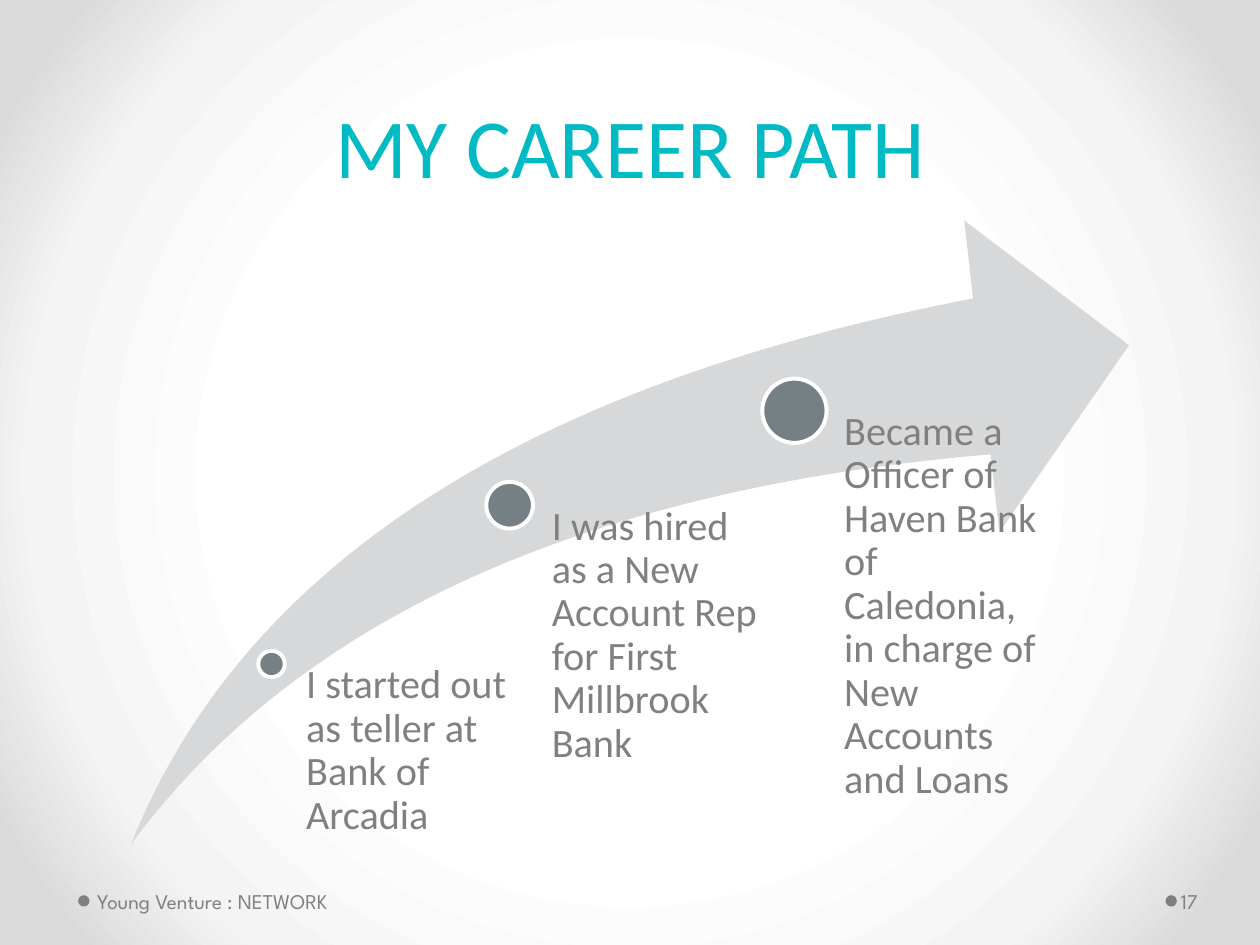
from dataclasses import dataclass

from pptx import Presentation
from pptx.dml.color import RGBColor
from pptx.enum.shapes import MSO_SHAPE as SHAPE
from pptx.enum.text import MSO_ANCHOR as ANCHOR, MSO_AUTO_SIZE as AUTO, PP_ALIGN as ALIGN
from pptx.oxml import parse_xml
from pptx.oxml.ns import nsdecls
from pptx.util import Inches, Pt


@dataclass(frozen=True)
class Theme:
    title: str = "00BAC4"
    text: str = "808080"
    swoosh: str = "D6D8D9"
    dot: str = "758085"
    outline: str = "FFFFFF"
    glow: tuple = ((50, "FFFFFF"), (76, "F4F4F4"), (92, "DADADA"))
    body_font: str = "Calibri"
    footer_font: str = "League Spartan"
    title_size: int = 48
    body_size: int = 23
    footer_size: int = 12


class Deck:
    """Style and current slide, laid out on a grid of 100 columns by 75 rows."""

    COLS, ROWS = 100, 75

    def __init__(self, theme):
        self.theme = theme
        self.prs = Presentation()
        self.prs.slide_width, self.prs.slide_height = Inches(10), Inches(7.5)
        self.slide = self.prs.slides.add_slide(self.prs.slide_layouts[5])

    def box(self, col, row, cols, rows):
        dx = self.prs.slide_width / self.COLS
        dy = self.prs.slide_height / self.ROWS
        return round(col * dx), round(row * dy), round(cols * dx), round(rows * dy)

    def background(self):
        stops = "".join(
            f'<a:gs pos="{pos * 1000}"><a:srgbClr val="{color}"/></a:gs>'
            for pos, color in self.theme.glow)
        bg = parse_xml(
            f'<p:bg {nsdecls("p", "a")}><p:bgPr><a:gradFill rotWithShape="1">'
            f'<a:gsLst>{stops}</a:gsLst><a:path path="circle">'
            '<a:fillToRect l="50000" t="50000" r="50000" b="50000"/></a:path>'
            '</a:gradFill><a:effectLst/></p:bgPr></p:bg>')
        self.slide.element.cSld.insert(0, bg)

    def run(self, p, text, size, font, color):
        r = p.add_run()
        r.text = text
        r.font.size, r.font.name = Pt(size), font
        r.font.color.rgb = RGBColor.from_string(color)

    def title(self, text, *grid):
        sp = self.slide.shapes.title
        sp.left, sp.top, sp.width, sp.height = self.box(*grid)
        tf = sp.text_frame
        tf.auto_size, tf.vertical_anchor = AUTO.NONE, ANCHOR.BOTTOM
        p = tf.paragraphs[0]
        p.alignment, p.line_spacing = ALIGN.CENTER, Pt(58)
        t = self.theme
        self.run(p, text, t.title_size, t.body_font, t.title)

    def shape(self, kind, fill, *grid, outline=None):
        sp = self.slide.shapes.add_shape(kind, *self.box(*grid))
        sp.shadow.inherit = False
        sp.fill.solid()
        sp.fill.fore_color.rgb = RGBColor.from_string(fill)
        if outline:
            sp.line.color.rgb = RGBColor.from_string(outline)
            sp.line.width = Pt(2.25)
        else:
            sp.line.fill.background()
        return sp

    def dot(self, x, y, size, fill, outline=None):
        self.shape(SHAPE.OVAL, fill, x - size / 2, y - size / 2, size, size,
                   outline=outline)

    def text(self, text, *grid, insets, size, font, anchor=ANCHOR.TOP, spacing=None):
        tf = self.slide.shapes.add_textbox(*self.box(*grid)).text_frame
        tf.word_wrap, tf.vertical_anchor = True, anchor
        tf.margin_left, tf.margin_top, tf.margin_right, tf.margin_bottom = map(Inches, insets)
        p = tf.paragraphs[0]
        p.line_spacing = spacing
        self.run(p, text, size, font, self.theme.text)

    def step(self, x, y, size, text, left, width, inset):
        """A dot on the swoosh; its text runs from the dot's centre to the base."""
        t = self.theme
        self.dot(x, y, size, t.dot, t.outline)
        self.text(text, left, y, width, BASE - y, insets=(inset, 0, 0, 0),
                  size=t.body_size, font=t.body_font, spacing=0.9)

    def footer(self, text, dot_x, left, width, insets):
        t = self.theme
        self.dot(dot_x, 71.5, 0.9, t.text)
        self.text(text, left, 69.5, width, 4, insets=insets, size=t.footer_size,
                  font=t.footer_font, anchor=ANCHOR.MIDDLE)


BASE = 67  # row where the swoosh and the step texts end

# Dot centre x, y and size; text; text left, width and inset
STEPS = [
    (21.55, 52.7, 2.1, "I started out as teller at Bank of Arcadia", 23.2, 18.5, 0.11),
    (40.45, 40.1, 3.7, "I was hired as a New Account Rep for First Millbrook Bank",
     41.8, 19, 0.2),
    (63.05, 32.6, 5.1, "Became a Officer of Haven Bank of Caledonia, "
     "in charge of New Accounts and Loans", 64.3, 19, 0.27),
]


def main():
    deck = Deck(Theme())
    deck.background()
    deck.title("MY CAREER PATH", 5, 1.5, 90, 14.5)

    # Career path
    swoosh = deck.shape(SHAPE.SWOOSH_ARROW, deck.theme.swoosh, 10.4, 17.5, 79.2, BASE - 17.5)
    swoosh.adjustments[0] = swoosh.adjustments[1] = 0.25
    for step in STEPS:
        deck.step(*step)

    # Footer and slide number
    deck.footer("Young Venture : NETWORK", 6.65, 7.2, 31.1, (0.05, 0.05, 0.1, 0.05))
    deck.footer("17", 92.95, 93.4, 6.1, (0.03, 0.05, 0.05, 0.05))

    deck.prs.save("out.pptx")


if __name__ == "__main__":
    main()
